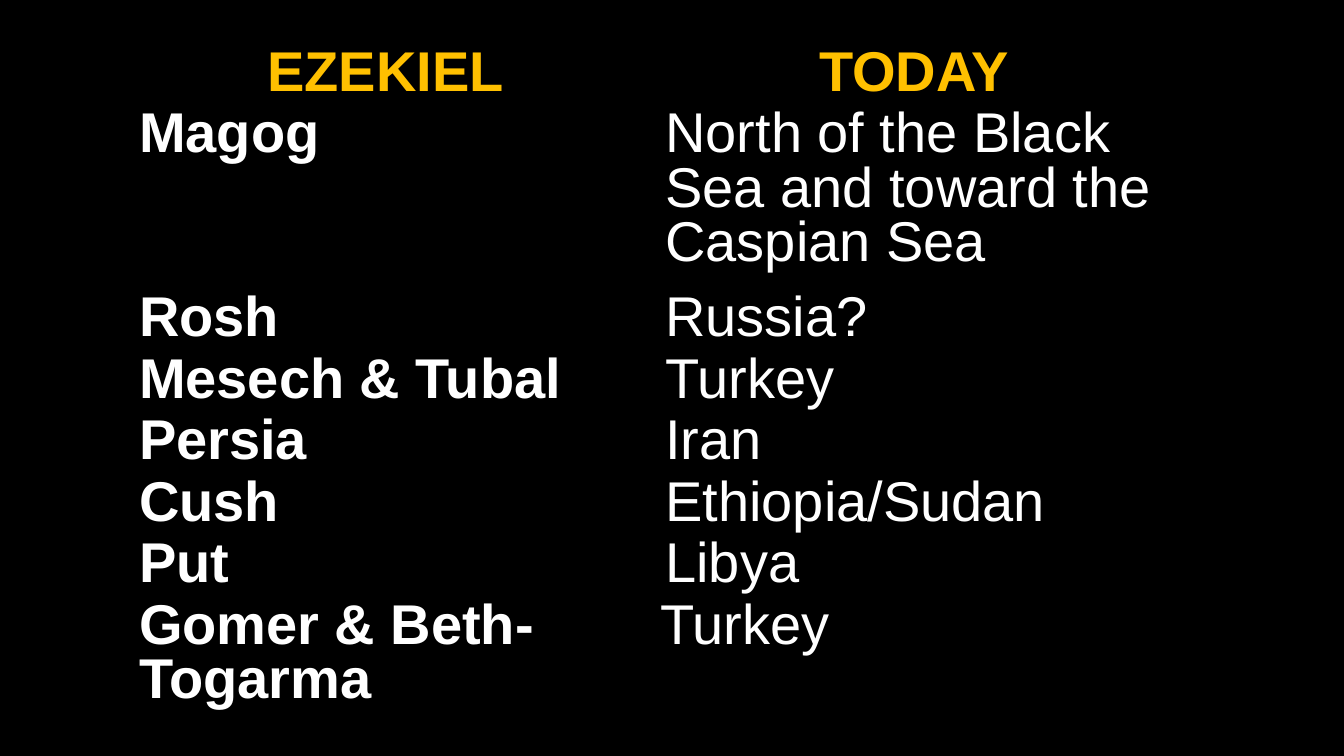
from pptx import Presentation
from pptx import util as u
from pptx.dml.color import RGBColor
from pptx.enum import text
from pptx.oxml import ns

HEADINGS = ("EZEKIEL", "TODAY")
NATIONS = [
    ("Magog", "North of the Black Sea and toward the Caspian Sea"),
    ("Rosh", "Russia?"),
    ("Mesech & Tubal", "Turkey"),
    ("Persia", "Iran"),
    ("Cush", "Ethiopia/Sudan"),
    ("Put", "Libya"),
    ("Gomer & Beth-Togarma", " Turkey"),
]
BLACK, WHITE, GOLD = "000000", "FFFFFF", "FFC000"
COLUMN_WIDTHS = (5.03, 5.45)
ROW_HEIGHT = 0.61
TALL_ROW = 1  # Magog: its place today takes three lines
LEFT, TOP, HEIGHT = 1.31, 0.48, 6.58
PLAIN_STYLE = "{2D5ABB26-0587-4C30-8999-92F81FD0307C}"  # no fill, no grid


def rgb(value):
    return RGBColor.from_string(value)


def write(cell, words, color=WHITE, bold=False, align=text.PP_ALIGN.LEFT, indent=0):
    cell.fill.background()
    cell.margin_left = cell.margin_right = u.Inches(0.07)
    cell.margin_top = cell.margin_bottom = 0
    p = cell.text_frame.paragraphs[0]
    p.alignment = align
    p.line_spacing, p.space_before = u.Pt(39), u.Pt(5)
    if indent:
        pPr = p._p.get_or_add_pPr()
        pPr.set("marL", str(u.Inches(indent)))
        pPr.set("indent", "0")
    r = p.add_run()
    r.text = words
    r.font.name, r.font.size, r.font.bold = "Arial", u.Pt(40), bold
    r.font.color.rgb = rgb(color)


prs = Presentation()
prs.slide_width, prs.slide_height = u.Inches(13.33), u.Inches(7.5)
s = prs.slides.add_slide(prs.slide_layouts[6])
s.background.fill.solid()
s.background.fill.fore_color.rgb = rgb(BLACK)

# Table frame
frame = s.shapes.add_table(len(NATIONS) + 1, 2, u.Inches(LEFT), u.Inches(TOP),
                           u.Inches(sum(COLUMN_WIDTHS)), u.Inches(HEIGHT))
table = frame.table
table.horz_banding = False
table._tbl.tblPr.find(ns.qn("a:tableStyleId")).text = PLAIN_STYLE
for column, width in zip(table.columns, COLUMN_WIDTHS):
    column.width = u.Inches(width)
for i, row in enumerate(table.rows):
    row.height = u.Inches(ROW_HEIGHT * (3 if i == TALL_ROW else 1))
frame.height = u.Inches(HEIGHT)

# Headings
for col, heading in enumerate(HEADINGS):
    write(table.cell(0, col), heading, color=GOLD, bold=True, align=text.PP_ALIGN.CENTER)

# Nations then and now; a place with a leading space needs no indent
for row, (ancient, today) in enumerate(NATIONS, 1):
    write(table.cell(row, 0), ancient, bold=True)
    write(table.cell(row, 1), today, indent=0 if today.startswith(" ") else 0.19)

prs.save("out.pptx")
